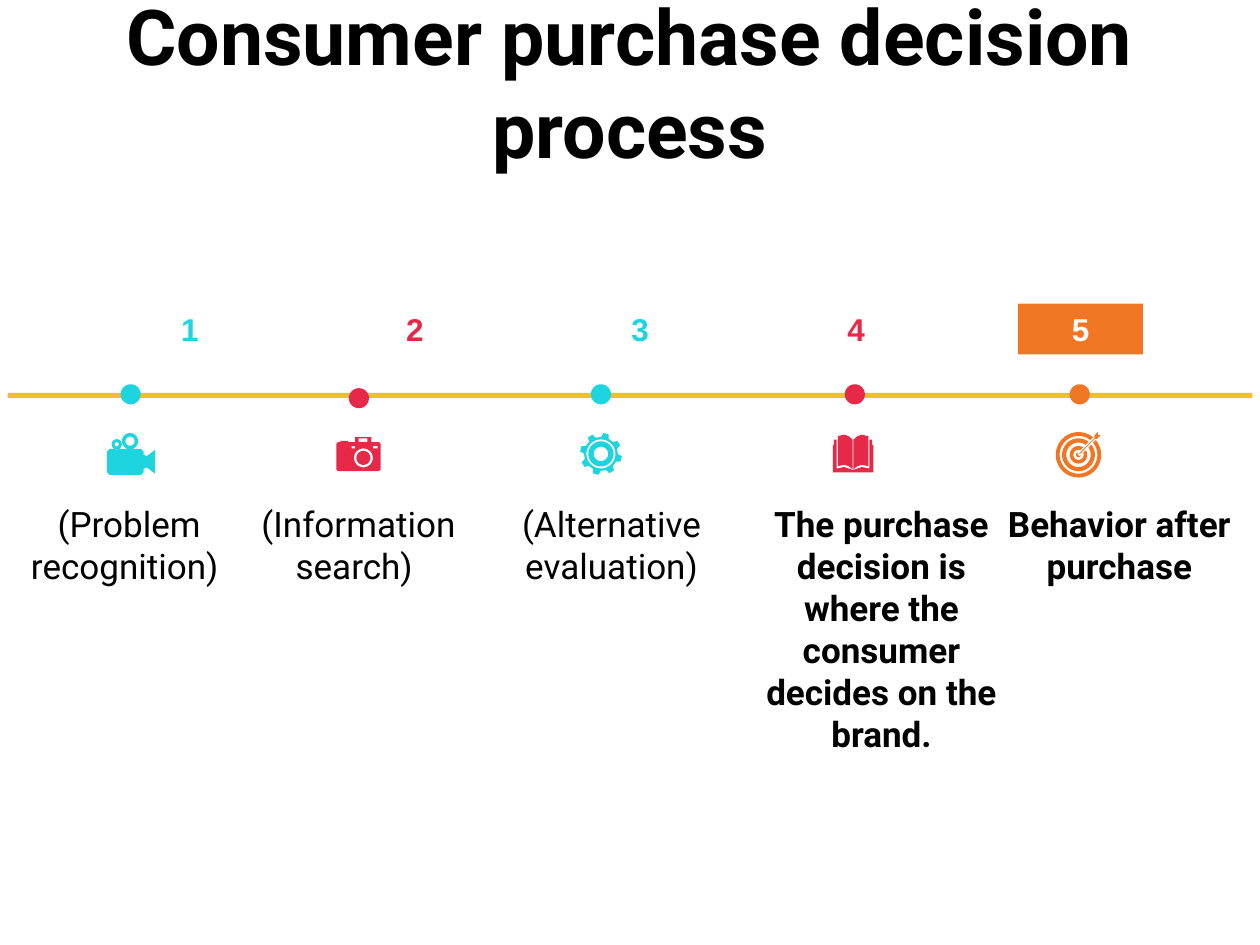
"""Build a five-step timeline slide of the consumer purchase decision process."""
from dataclasses import dataclass
from math import cos, pi, sin

from pptx import Presentation
from pptx.dml.color import RGBColor
from pptx.enum.shapes import MSO_SHAPE
from pptx.enum.text import MSO_ANCHOR, MSO_AUTO_SIZE, PP_ALIGN
from pptx.util import Pt

CENTER = PP_ALIGN.CENTER
MIDDLE = MSO_ANCHOR.MIDDLE
NO_FIT = MSO_AUTO_SIZE.NONE
GROW = MSO_AUTO_SIZE.SHAPE_TO_FIT_TEXT
OVAL = MSO_SHAPE.OVAL
RECTANGLE = MSO_SHAPE.RECTANGLE

BLACK, WHITE = "000000", "FFFFFF"
CYAN, RED, ORANGE, YELLOW = "1ED4DE", "E62949", "F07624", "F4BD2D"
DOT = 11.5

Contour = list[tuple[float, float]]


@dataclass
class Step:
    number: str
    label: str
    color: str
    number_left: float
    number_width: float
    dot_center: float
    dot_top: float
    label_left: float
    label_width: float
    label_height: float = 31.7
    bold: bool = False
    filled: bool = False


STEPS = [
    Step("1", "(Problem recognition) ", CYAN, 96.2, 24.5, 74.7, 219.6, -2.9, 153.4),
    Step("2", "(Information search) ", RED, 224.9, 24.5, 205.1, 221.8, 133.2, 143.3),
    Step("3", "(Alternative evaluation)", CYAN, 353.5, 24.5, 343.4, 219.6, 271.4, 156.2),
    Step("4", "The purchase decision is where the consumer decides on the brand.",
         RED, 477, 24.5, 488.5, 219.6, 426, 155.5, 104.4, bold=True),
    Step("5", "Behavior after purchase", ORANGE, 581.8, 71.3, 617, 219.6,
         568, 143.3, 55.4, bold=True, filled=True),
]


def rgb(value: str) -> RGBColor:
    return RGBColor.from_string(value)


def paint(shape, color: str) -> None:
    shape.shadow.inherit = False
    shape.fill.solid()
    shape.fill.fore_color.rgb = rgb(color)
    shape.line.fill.background()


def write(frame, text: str, size: float, color: str, font: str, bold: bool) -> None:
    paragraph = frame.paragraphs[0]
    paragraph.text = text
    paragraph.alignment = CENTER
    paragraph.font.size = Pt(size)
    paragraph.font.name = font
    paragraph.font.bold = bold
    paragraph.font.color.rgb = rgb(color)


def add_solid(page, kind, left: float, top: float, width: float, height: float, color: str):
    shape = page.shapes.add_shape(kind, Pt(left), Pt(top), Pt(width), Pt(height))
    paint(shape, color)
    return shape


def add_step(page, step: Step) -> None:
    add_solid(page, OVAL, step.dot_center - DOT / 2, step.dot_top, DOT, DOT, step.color)
    number_place = Pt(step.number_left), Pt(173.5), Pt(step.number_width), Pt(29)
    number = page.shapes.add_textbox(*number_place)
    number.text_frame.word_wrap = step.filled
    if step.filled:
        paint(number, step.color)
    number.text_frame.auto_size = GROW
    write(number.text_frame, step.number, 18, WHITE if step.filled else step.color, "Arial", True)
    label = page.shapes.add_textbox(
        Pt(step.label_left), Pt(283.7), Pt(step.label_width), Pt(step.label_height))
    label.text_frame.word_wrap = True
    label.text_frame.auto_size = GROW
    write(label.text_frame, step.label, 20, BLACK, "Roboto", step.bold)


def circle(x: float, y: float, radius: float) -> Contour:
    angles = [2 * pi * index / 40 for index in range(40)]
    return [(x + radius * cos(angle), y + radius * sin(angle)) for angle in angles]


def rectangle(left: float, top: float, width: float, height: float) -> Contour:
    right, bottom = left + width, top + height
    return [(left, top), (right, top), (right, bottom), (left, bottom)]


def cog(x: float, y: float) -> Contour:
    profile = [(-13, 9.7), (-7.5, 12), (7.5, 12), (13, 9.7)]
    points = []
    for tooth in range(8):
        for offset, radius in profile:
            angle = (tooth * 45 + 14 + offset) * pi / 180
            points.append((x + radius * cos(angle), y + radius * sin(angle)))
    return points


def mirror(points: Contour, axis: float) -> Contour:
    return [(2 * axis - x, y) for x, y in points]


def add_icon(page, contours: list[Contour], color: str):
    (start_x, start_y), *rest = contours[0]
    builder = page.shapes.build_freeform(Pt(start_x), Pt(start_y))
    builder.add_line_segments([(Pt(x), Pt(y)) for x, y in rest], close=True)
    for (start_x, start_y), *rest in contours[1:]:
        builder.move_to(Pt(start_x), Pt(start_y))
        builder.add_line_segments([(Pt(x), Pt(y)) for x, y in rest], close=True)
    shape = builder.convert_to_shape()
    paint(shape, color)
    return shape


def add_icons(page) -> None:
    video_body = [
        (61.2, 258), (62.6, 256.6), (80.6, 256.6), (82, 258), (82, 260), (84, 260.6),
        (88.6, 257), (88.6, 270.7), (84, 267.2), (82, 267.8), (82, 270), (80.6, 271.4),
        (62.6, 271.4), (61.2, 270)]
    reels = [circle(74.3, 252.1, 4.6), circle(74.3, 252.1, 2.6),
             circle(66.7, 253.9, 2.9), circle(66.7, 253.9, 1.2)]
    add_icon(page, [video_body, *reels], CYAN)

    camera_body = [
        (192.2, 253.7), (193.2, 252.7), (194.6, 252.7), (194.6, 251.9), (199.2, 251.9),
        (199.2, 252.7), (203, 252.7), (203, 249.8), (212.2, 249.8), (212.2, 252.7),
        (216.6, 252.7), (217.6, 253.7), (217.6, 268.3), (216.6, 269.3), (193.2, 269.3),
        (192.2, 268.3)]
    windows = [rectangle(205, 250.6, 5, 2), rectangle(201, 255, 2, 1.3),
               rectangle(213.2, 255, 2.6, 1.3)]
    lens = [circle(207.7, 261.7, radius) for radius in (5.4, 4)]
    add_icon(page, [camera_body, *windows, *lens], RED)

    rings = [circle(343.4, 259.4, radius) for radius in (8.3, 7.2, 4.1)]
    add_icon(page, [cog(343.4, 259.4), *rings], CYAN)

    leaf = [(478.8, 249.3), (482.4, 248.4), (485, 249.3), (487.3, 251.3), (487.3, 268.2),
            (485, 266.4), (482.4, 265.7), (478.8, 266.4)]
    cover = [(475.9, 254.2), (476.6, 254.2), (476.6, 251.3), (478.1, 251.3), (478.1, 267.8),
             (482.4, 266.9), (487.5, 268.6), (487.5, 270), (475.9, 270)]
    halves = [leaf, cover]
    add_icon(page, halves + [mirror(half, 487.5) for half in halves], RED)

    target = [circle(616.3, 259.9, radius) for radius in (13, 10.8, 9.4, 7, 5, 2.9, 1.4)]
    add_icon(page, target, ORANGE)
    arrow = [(616, 259.2), (625, 250.2), (625, 248.7), (627.9, 245.7), (627.9, 248.2),
             (630.2, 248.2), (627.2, 251.2), (625.8, 251.2), (617, 260.2)]
    dart = add_icon(page, [arrow], ORANGE)
    dart.line.color.rgb = rgb(WHITE)
    dart.line.width = Pt(0.75)


def main() -> None:
    deck = Presentation()
    deck.slide_width, deck.slide_height = Pt(720), Pt(540)
    page = deck.slides.add_slide(deck.slide_layouts[5])
    title = page.shapes.title
    title.left, title.top, title.width, title.height = Pt(0), Pt(0), Pt(720), Pt(93)
    title.text_frame.word_wrap = True
    title.text_frame.auto_size = NO_FIT
    title.text_frame.vertical_anchor = MIDDLE
    write(title.text_frame, "Consumer purchase decision process", 44, BLACK, "Roboto", True)
    add_solid(page, RECTANGLE, 4.3, 224.5, 711.4, 2.9, YELLOW)
    for step in STEPS:
        add_step(page, step)
    add_icons(page)
    deck.save("out.pptx")


if __name__ == "__main__":
    main()
